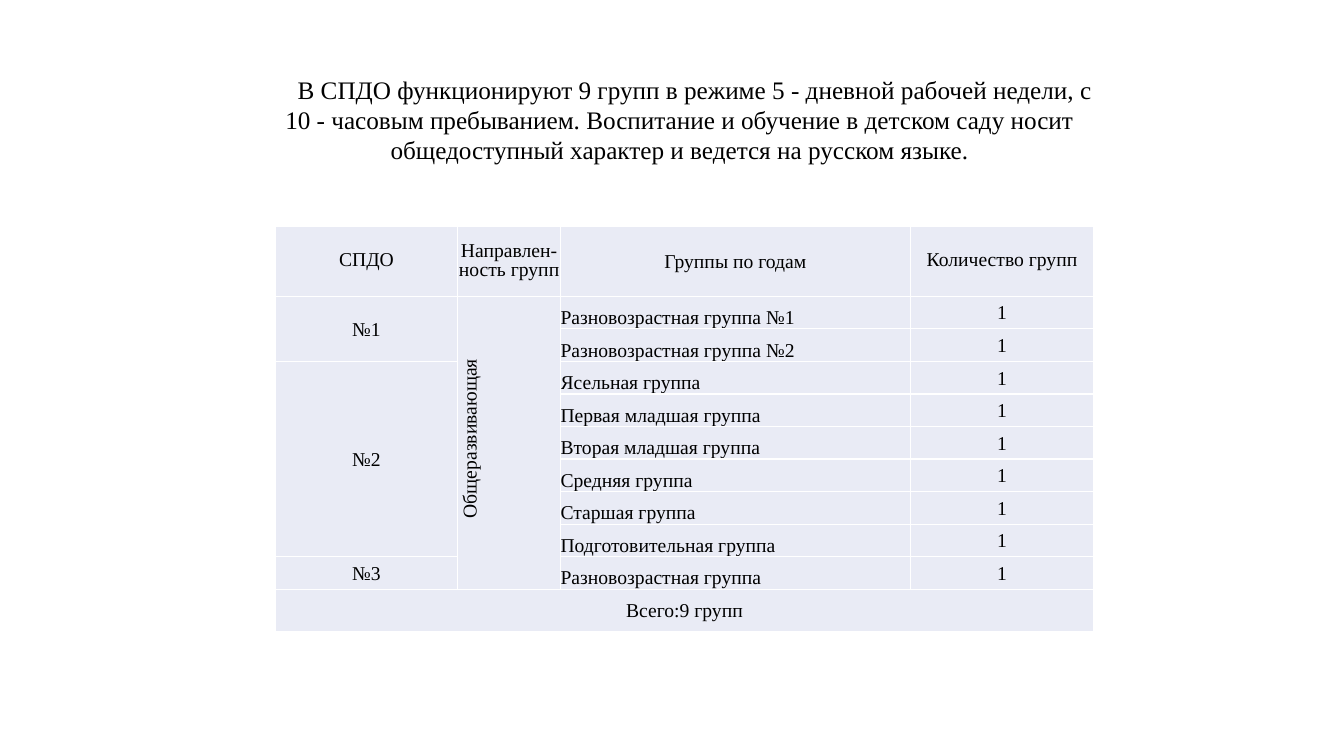
from dataclasses import dataclass

from lxml.etree import SubElement
from pptx import Presentation
from pptx.dml.color import RGBColor
from pptx.enum.text import MSO_ANCHOR, PP_ALIGN
from pptx.oxml.ns import qn
from pptx.util import Inches, Length, Pt

W, H = Inches(13.33), Inches(7.5)
FONT, BLACK, WHITE, PALE = "Times New Roman", "000000", "FFFFFF", "E9EBF5"
INTRO = (
    "В СПДО функционируют 9 групп в режиме 5 - дневной рабочей недели, с "
    "10 - часовым пребыванием. Воспитание и обучение в детском саду носит "
    "общедоступный характер и ведется на русском языке."
)
GROUPS = [
    "Разновозрастная группа №1",
    "Разновозрастная группа №2",
    "Ясельная группа",
    "Первая младшая группа",
    "Вторая младшая группа",
    "Средняя группа",
    "Старшая группа",
    "Подготовительная группа",
    "Разновозрастная группа",
]
COLS = [13.58, 7.65, 26.03, 13.65]
ROWS = [9.2] + [4.27] * len(GROUPS) + [5.6]


@dataclass
class Entry:
    row: int
    col: int
    text: str
    spacing: float | Length = 1.07
    align: PP_ALIGN = PP_ALIGN.CENTER
    rows: int = 1
    cols: int = 1
    upright: bool = False


ENTRIES = [
    Entry(0, 0, "СПДО", Pt(13.4)),
    Entry(0, 1, "Направлен-ность групп", Pt(13.7)),
    Entry(0, 2, "Группы по годам"),
    Entry(0, 3, "Количество групп", Pt(13.4)),
    Entry(1, 0, "№1", rows=2),
    Entry(3, 0, "№2", rows=6),
    Entry(9, 0, "№3"),
    Entry(1, 1, "Общеразвивающая", rows=len(GROUPS), upright=True),
    Entry(len(ROWS) - 1, 0, "Всего:9 групп", cols=len(COLS)),
]
for i, group in enumerate(GROUPS, 1):
    ENTRIES += [Entry(i, 2, group, 1.5, PP_ALIGN.LEFT), Entry(i, 3, "1")]


def across(percent: float) -> Length:
    return Length(round(W * percent / 100))


def down(percent: float) -> Length:
    return Length(round(H * percent / 100))


def color(value: str) -> RGBColor:
    return RGBColor.from_string(value)


def format_run(p, size: float) -> None:
    for r in p.runs:
        r.font.name, r.font.size = FONT, Pt(size)
        r.font.color.rgb = color(BLACK)


def style_cell(cell) -> None:
    cell.margin_left = cell.margin_right = cell.margin_top = cell.margin_bottom = 0
    cell.vertical_anchor = MSO_ANCHOR.MIDDLE
    tc_pr = cell._tc.get_or_add_tcPr()
    for side in ("lnL", "lnR", "lnT", "lnB"):
        ln = SubElement(tc_pr, qn(f"a:{side}"), w=str(Pt(1)))
        SubElement(SubElement(ln, qn("a:solidFill")), qn("a:srgbClr"), val=WHITE)
    cell.fill.solid()
    cell.fill.fore_color.rgb = color(PALE)


def fill_entry(table, entry: Entry) -> None:
    cell = table.cell(entry.row, entry.col)
    if entry.rows * entry.cols > 1:
        cell.merge(table.cell(entry.row + entry.rows - 1, entry.col + entry.cols - 1))
    cell.text_frame.text = entry.text
    p = cell.text_frame.paragraphs[0]
    p.alignment, p.line_spacing = entry.align, entry.spacing
    format_run(p, 14)
    if entry.upright:
        cell._tc.get_or_add_tcPr().set("vert", "vert270")
        p._p.get_or_add_pPr().set("marL", str(Inches(0.08)))


def add_groups_table(s) -> None:
    table = s.shapes.add_table(
        len(ROWS), len(COLS), across(20.48), down(30), across(sum(COLS)), down(sum(ROWS))
    ).table
    table.first_row = table.horz_banding = False
    for column, width in zip(table.columns, COLS):
        column.width = across(width)
    for row, height in zip(table.rows, ROWS):
        row.height = down(height)
    for cell in table.iter_cells():
        style_cell(cell)
    for entry in ENTRIES:
        fill_entry(table, entry)


def add_intro(s) -> None:
    sp = s.shapes.add_textbox(across(18.68), down(9.07), across(63.77), down(13.47))
    tf = sp.text_frame
    tf.word_wrap, tf.vertical_anchor = True, MSO_ANCHOR.MIDDLE
    tf.text = INTRO
    p = tf.paragraphs[0]
    p.alignment = PP_ALIGN.CENTER
    p._p.get_or_add_pPr().set("indent", str(Inches(0.3)))
    format_run(p, 18)


def main() -> None:
    """Build the slide listing the kindergarten groups."""
    prs = Presentation()
    prs.slide_width, prs.slide_height = W, H
    s = prs.slides.add_slide(prs.slide_layouts[6])
    add_groups_table(s)
    add_intro(s)
    prs.save("out.pptx")


if __name__ == "__main__":
    main()
